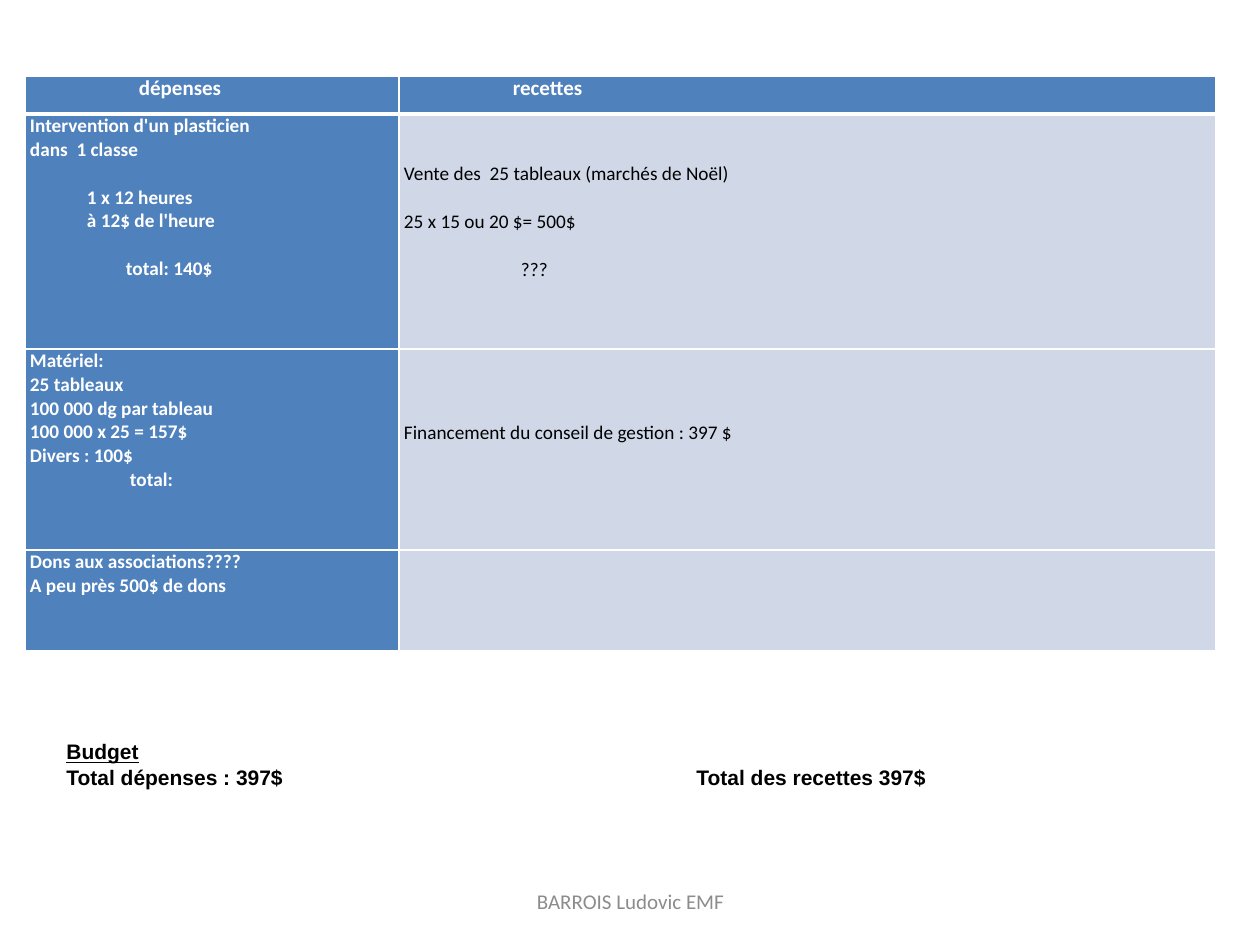
import pptx
import pptx.util
import pptx.dml.color
import pptx.enum.text
import pptx.oxml.ns
import lxml.etree
from dataclasses import dataclass

SCALE = 914400 // 126  # EMU in one px


@dataclass(frozen=True)
class Theme:
    blue: str = "4F81BD"
    pale: str = "D0D8E8"
    white: str = "FFFFFF"
    black: str = "000000"
    grey: str = "8C8C8C"
    body: str = "Calibri"
    sums: str = "Arial"
    small: int = 11
    large: int = 12
    thin: int = 1
    thick: int = 3


THEME = Theme()
LINE = 24  # height of one body line

# Each line is (text, indent, blank lines before it)
COSTS = [
    [("Intervention d'un plasticien", 0, 0), ("dans  1 classe", 0, 0),
     ("1 x 12 heures", 57, 1), ("à 12$ de l'heure", 57, 0),
     ("total: 140$", 96, 1)],
    [("Matériel:", 0, 0), ("25 tableaux", 0, 0),
     ("100 000 dg par tableau", 0, 0), ("100 000 x 25 = 157$", 0, 0),
     ("Divers : 100$", 0, 0), ("total:", 100, 0)],
    [("Dons aux associations????", 0, 0), ("A peu près 500$ de dons", 0, 0)],
]
GAINS = [
    [("Vente des  25 tableaux (marchés de Noël)", 0, 2),
     ("25 x 15 ou 20 $= 500$", 0, 1), ("???", 117, 1)],
    [("Financement du conseil de gestion : 397 $", 0, 3)],
    [],
]
HEADS = ["dépenses", "recettes"]


def px(num):
    return pptx.util.Emu(num * SCALE)


def rgb(code):
    return pptx.dml.color.RGBColor.from_string(code)


def add_run(para, text, font, size, color, bold=False, under=False):
    run = para.add_run()
    run.text = text
    run.font.name = font
    run.font.size = pptx.util.Pt(size)
    run.font.color.rgb = rgb(color)
    run.font.bold = bold
    run.font.underline = under


def set_edge(cell, side, width):
    name = pptx.oxml.ns.qn
    edge = lxml.etree.Element(name("a:ln" + side), w=str(pptx.util.Pt(width)))
    fill = lxml.etree.SubElement(edge, name("a:solidFill"))
    lxml.etree.SubElement(fill, name("a:srgbClr"), val=THEME.white)
    return edge


def set_edges(cell, top, bottom):
    props = cell._tc.get_or_add_tcPr()
    widths = {"L": THEME.thin, "R": THEME.thin, "T": top, "B": bottom}
    for spot, (side, width) in enumerate(widths.items()):
        props.insert(spot, set_edge(cell, side, width))


def fill_cell(cell, lines, size, fill, color, bold):
    cell.fill.solid()
    cell.fill.fore_color.rgb = rgb(fill)
    cell.margin_left = cell.margin_right = px(5)
    cell.margin_top = cell.margin_bottom = 0
    frame = cell.text_frame
    for num, (text, indent, blanks) in enumerate(lines):
        para = frame.paragraphs[0] if num == 0 else frame.add_paragraph()
        if num == 0:
            cell.margin_top = px(blanks * LINE)
        else:
            para.space_before = px(blanks * LINE)
        para._p.get_or_add_pPr().set("marL", str(px(indent)))
        add_run(para, text, THEME.body, size, color, bold)


def add_budget(slide):
    cols, rows = [374, 817], [38, 235, 201, 101]
    table = slide.shapes.add_table(
        len(rows), len(cols), px(25), px(76), px(sum(cols)), px(sum(rows))).table
    table.horz_banding = False
    for col, width in zip(table.columns, cols):
        col.width = px(width)
    for row, height in zip(table.rows, rows):
        row.height = px(height)

    # Heading row
    for num, head in enumerate(HEADS):
        cell = table.cell(0, num)
        fill_cell(cell, [(head, 109, 0)], THEME.large,
                  THEME.blue, THEME.white, True)
        set_edges(cell, THEME.thin, THEME.thick)

    # Costs on the left, gains on the right
    looks = [(COSTS, THEME.blue, THEME.white, True),
             (GAINS, THEME.pale, THEME.black, False)]
    for col, (items, fill, color, bold) in enumerate(looks):
        for row, lines in enumerate(items, 1):
            cell = table.cell(row, col)
            fill_cell(cell, lines, THEME.small, fill, color, bold)
            set_edges(cell, THEME.thick if row == 1 else THEME.thin, THEME.thin)


def add_box(slide, left, top, width, height, anchor):
    box = slide.shapes.add_textbox(px(left), px(top), px(width), px(height))
    frame = box.text_frame
    frame.word_wrap = True
    frame.vertical_anchor = anchor
    return frame


def add_stop(para, place):
    name = pptx.oxml.ns.qn
    stops = lxml.etree.SubElement(para._p.get_or_add_pPr(), name("a:tabLst"))
    lxml.etree.SubElement(stops, name("a:tab"), pos=str(px(place)), algn="l")


def add_totals(slide):
    frame = add_box(slide, 54, 731, 1121, 102,
                    pptx.enum.text.MSO_ANCHOR.TOP)
    frame.margin_top = px(8)
    add_run(frame.paragraphs[0], "Budget", THEME.sums, THEME.large,
            THEME.black, bold=True, under=True)
    para = frame.add_paragraph()
    add_stop(para, 630)
    add_run(para, "Total dépenses : 397$\tTotal des recettes 397$",
            THEME.sums, THEME.large, THEME.black, bold=True)


def add_footer(slide):
    frame = add_box(slide, 431, 876, 399, 50,
                    pptx.enum.text.MSO_ANCHOR.MIDDLE)
    para = frame.paragraphs[0]
    para.alignment = pptx.enum.text.PP_ALIGN.CENTER
    add_run(para, "BARROIS Ludovic EMF", THEME.body, THEME.large, THEME.grey)


def main():
    deck = pptx.Presentation()
    deck.slide_width, deck.slide_height = px(1260), px(945)
    slide = deck.slides.add_slide(deck.slide_layouts[6])
    add_budget(slide)
    add_totals(slide)
    add_footer(slide)
    deck.save("out.pptx")


if __name__ == "__main__":
    main()
